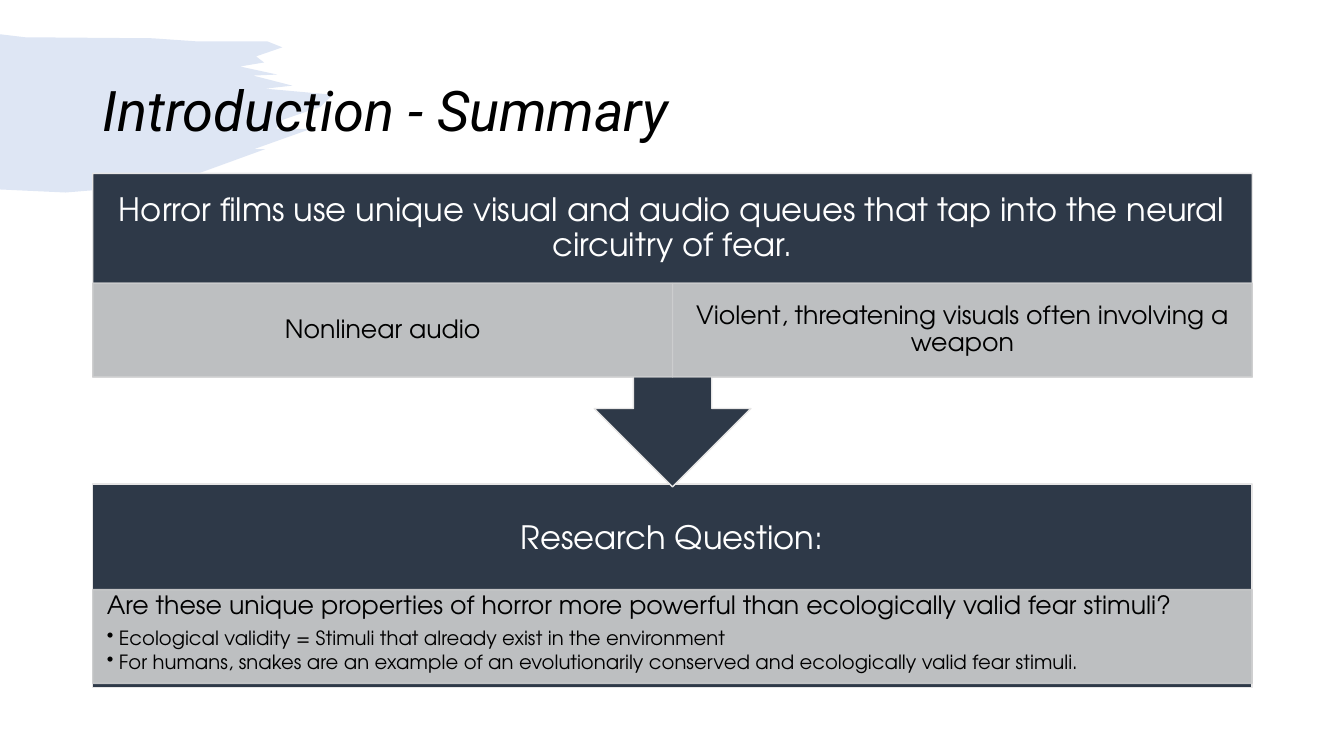
from lxml import etree
from pptx import Presentation
from pptx import util as u
from pptx.dml import color
from pptx.enum import shapes, text

from pptx.oxml import ns

SANS = "TeX Gyre Adventor"
NAVY, GRAY, EDGE, BLUE = "2E3948", "CDCECF", "E7E6E6", "5A82CB"
LEFT, WIDE = 0.92, 11.5
HALF = WIDE / 2
HEAD, BAND = 1.09, 0.93
CENTER = text.PP_ALIGN.CENTER
BRUSH = [
    (0, 34), (25, 37), (151, 38), (194, 41), (265, 41), (280, 47),
    (254, 56), (262, 62), (238, 66), (275, 74), (251, 75), (290, 85),
    (263, 88), (330, 94), (318, 106), (280, 119), (274, 128), (308, 128),
    (252, 148), (263, 148), (197, 172), (102, 188), (65, 191), (0, 188),
]


def rgb(code):
    return color.RGBColor.from_string(code)


def fade(part, share):
    for tone in part.iter(ns.qn("a:srgbClr")):
        etree.SubElement(tone, ns.qn("a:alpha"), val=str(share * 1000))


def write(para, words, size=18, font=SANS, ink="000000", slant=False,
          align=None, gap=0.35, bullet=False):
    run = para.add_run()
    run.text = words
    run.font.size = u.Pt(size)
    run.font.name = font
    run.font.italic = slant
    run.font.color.rgb = rgb(ink)
    para.alignment = align or text.PP_ALIGN.LEFT
    para.line_spacing = 0.9
    para.space_after = u.Pt(round(size * gap, 1))
    if bullet:
        props = para._p.get_or_add_pPr()
        props.set("marL", str(u.Inches(0.12)))
        props.set("indent", str(u.Inches(-0.12)))
        etree.SubElement(props, ns.qn("a:buChar"), char="•")


class Deck:
    def __init__(self):
        self.show = Presentation()
        self.show.slide_width = u.Inches(13.33)
        self.show.slide_height = u.Inches(7.5)
        self.slide = self.show.slides.add_slide(self.show.slide_layouts[6])

    def paint(self, shape, fill, line=None, share=100):
        shape.shadow.inherit = False
        shape.fill.solid()
        shape.fill.fore_color.rgb = rgb(fill)
        if line:
            shape.line.color.rgb = rgb(line)
            shape.line.width = u.Pt(1)
        else:
            shape.line.fill.background()
        if share < 100:
            fade(shape._element.spPr, share)

    def frame(self, shape, side, edge, middle=True):
        body = shape.text_frame
        body.word_wrap = True
        body.margin_left = body.margin_right = u.Inches(side)
        body.margin_top = body.margin_bottom = u.Inches(edge)
        anchor = text.MSO_ANCHOR
        body.vertical_anchor = anchor.MIDDLE if middle else anchor.TOP
        return body

    def brush(self):
        pen = self.slide.shapes.build_freeform(*BRUSH[0], scale=u.Inches(0.01))
        pen.add_line_segments(BRUSH[1:], close=True)
        self.paint(pen.convert_to_shape(), BLUE, share=20)

    def box(self, kind, x, y, w, h, fill, line, share=100):
        shape = self.slide.shapes.add_shape(kind, *map(u.Inches, (x, y, w, h)))
        self.paint(shape, fill, line, share)
        return shape

    def label(self, y, h, words, side=0.18, edge=0.18, **style):
        shape = self.slide.shapes.add_textbox(
            *map(u.Inches, (LEFT, y, WIDE, h)))
        body = self.frame(shape, side, edge)
        write(body.paragraphs[0], words, **style)

    def panel(self, x, y, w, lines, middle=True):
        shape = self.box(shapes.MSO_SHAPE.RECTANGLE, x, y, w, BAND,
                         GRAY, GRAY, 90)
        body = self.frame(shape, 0.14, 0.03, middle)
        for i, (words, style) in enumerate(lines):
            para = body.add_paragraph() if i else body.paragraphs[0]
            write(para, words, **style)


def main():
    deck = Deck()
    deck.brush()
    deck.label(0.4, 1.45, "Introduction - Summary", side=0.1, edge=0.05,
               size=40, font="Roboto", slant=True, gap=0)

    head = dict(size=23, ink="FFFFFF", align=CENTER)
    deck.box(shapes.MSO_SHAPE.RECTANGLE, LEFT, 4.8, WIDE, 2.02, NAVY, EDGE)
    deck.label(4.8, HEAD, "Research Question:", **head)
    point = dict(size=14, gap=0.15, bullet=True)
    deck.panel(LEFT, 5.85, WIDE, [
        ("Are these unique properties of horror more powerful than "
         "ecologically valid fear stimuli?", {}),
        ("Ecological validity = Stimuli that already exist in the "
         "environment", point),
        ("For humans, snakes are an example of an evolutionarily conserved "
         "and ecologically valid fear stimuli.", point),
    ], middle=False)

    arrow = deck.box(shapes.MSO_SHAPE.UP_ARROW_CALLOUT, LEFT, 1.72, WIDE, 3.11,
                     NAVY, EDGE)
    arrow.rotation = 180
    deck.label(1.72, HEAD, "Horror films use unique visual and audio queues "
               "that tap into the neural circuitry of fear.", **head)
    cues = ["Nonlinear audio",
            "Violent, threatening visuals often involving a weapon"]
    for i, cue in enumerate(cues):
        deck.panel(LEFT + i * HALF, 1.72 + HEAD, HALF,
                   [(cue, dict(align=CENTER))])

    deck.show.save("out.pptx")


if __name__ == "__main__":
    main()
